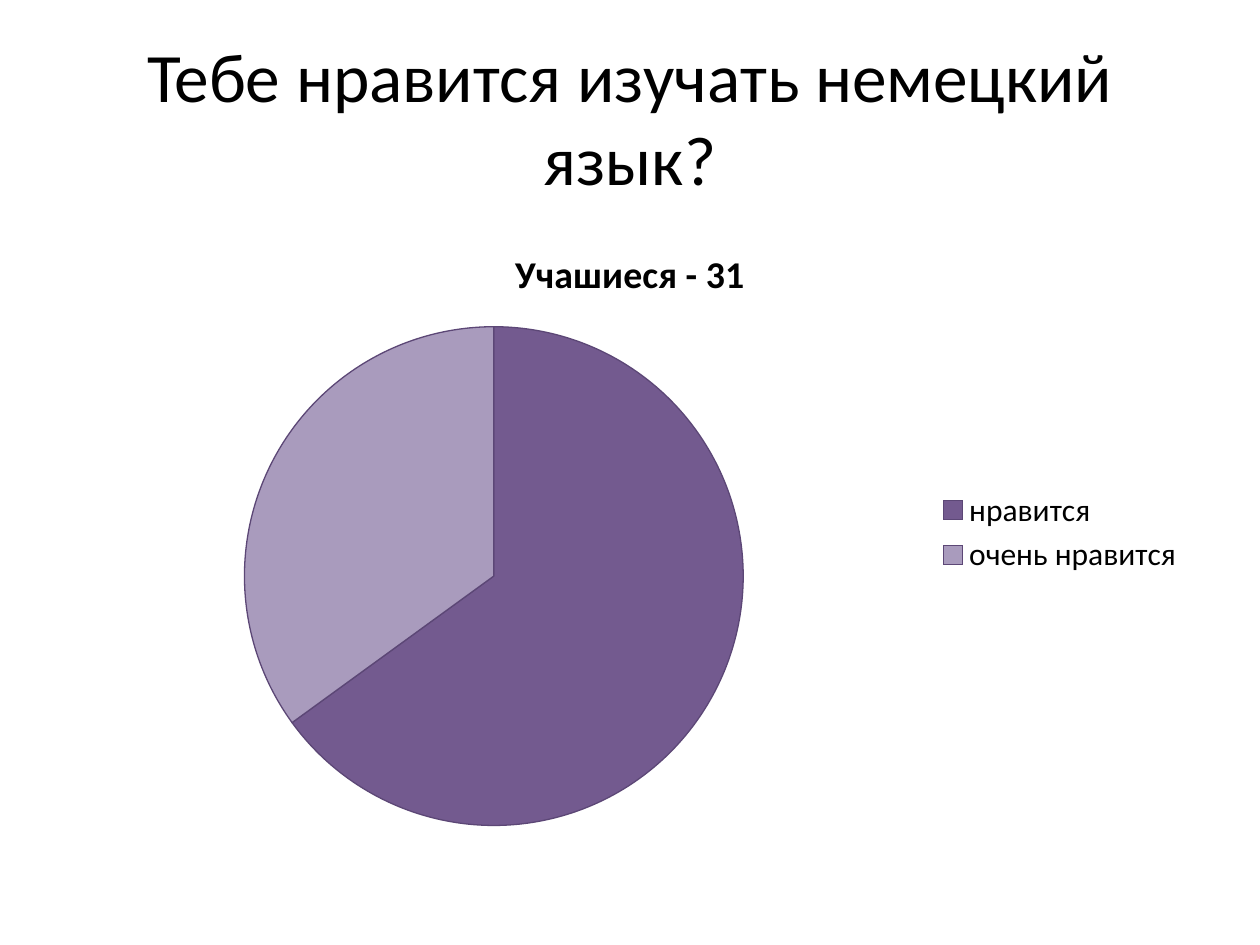
from lxml import etree
from pptx import Presentation
from pptx.chart.data import CategoryChartData
from pptx.dml.color import RGBColor
from pptx.enum.chart import XL_CHART_TYPE, XL_LEGEND_POSITION
from pptx.enum.text import MSO_ANCHOR, MSO_AUTO_SIZE, PP_ALIGN
from pptx.oxml.ns import qn
from pptx.util import Cm, Pt

PIE = XL_CHART_TYPE.PIE
RIGHT = XL_LEGEND_POSITION.RIGHT
MIDDLE = MSO_ANCHOR.MIDDLE
NO_AUTOFIT = MSO_AUTO_SIZE.NONE
CENTER = PP_ALIGN.CENTER

BLACK = RGBColor(0x00, 0x00, 0x00)
OUTLINE = RGBColor(0x5C, 0x47, 0x76)
SLICE_COLORS = (RGBColor(0x73, 0x5A, 0x8F), RGBColor(0xA9, 0x9B, 0xBD))
FONT = "Calibri"

TITLE = "Тебе нравится изучать немецкий язык?"
CHART_TITLE = "Учашиеся - 31"
ANSWERS = {"нравится": 65, "очень нравится": 35}
PLOT_LAYOUT = {"x": 0.16, "y": 0.17, "w": 0.44, "h": 0.8}


def style_font(font, size, bold=False):
    """Apply the slide's typeface and text colour."""
    font.name = FONT
    font.size = Pt(size)
    font.bold = bold
    font.color.rgb = BLACK


def add_title(s, left, top, width, height):
    """Place the question in the title placeholder."""
    sp = s.shapes.title
    sp.left, sp.top, sp.width, sp.height = left, top, width, height
    tf = sp.text_frame
    tf.text = TITLE
    tf.word_wrap = True
    tf.auto_size = NO_AUTOFIT
    tf.vertical_anchor = MIDDLE
    p = tf.paragraphs[0]
    p.alignment = CENTER
    style_font(p.font, 39.6)


def set_plot_layout(chart):
    """Fix the plot area as fractions of the chart frame."""
    plot_area = chart.element.find(".//" + qn("c:plotArea"))
    layout = plot_area.find(qn("c:layout"))
    if layout is None:
        layout = etree.Element(qn("c:layout"))
        plot_area.insert(0, layout)
    manual = etree.SubElement(layout, qn("c:manualLayout"))
    settings = {"layoutTarget": "inner", "xMode": "edge", "yMode": "edge", **PLOT_LAYOUT}
    for tag, value in settings.items():
        etree.SubElement(manual, qn("c:" + tag)).set("val", str(value))


def add_answers_chart(s, left, top, width, height):
    """Add the pie of answers with its title and legend."""
    data = CategoryChartData()
    data.categories = list(ANSWERS)
    data.add_series(CHART_TITLE, list(ANSWERS.values()))
    chart = s.shapes.add_chart(PIE, left, top, width, height, data).chart
    style_font(chart.font, 18)

    chart.has_title = True
    tf = chart.chart_title.text_frame
    tf.text = CHART_TITLE
    style_font(tf.paragraphs[0].font, 21.6, bold=True)

    chart.has_legend = True
    chart.legend.position = RIGHT
    chart.legend.include_in_layout = False
    style_font(chart.legend.font, 18)

    plot = chart.plots[0]
    plot.vary_by_categories = True
    for i, color in enumerate(SLICE_COLORS):
        fmt = plot.series[0].points[i].format
        fmt.fill.solid()
        fmt.fill.fore_color.rgb = color
        fmt.line.color.rgb = OUTLINE
        fmt.line.width = Pt(0.75)
    set_plot_layout(chart)


def main():
    """Build the survey slide and save it."""
    prs = Presentation()
    prs.slide_width, prs.slide_height = Cm(25.4), Cm(19.05)
    s = prs.slides.add_slide(prs.slide_layouts[5])
    margin = Cm(1.27)
    width = prs.slide_width - 2 * margin
    add_title(s, margin, Cm(0.76), width, Cm(3.18))
    add_answers_chart(s, margin, Cm(4.45), width, Cm(12.57))
    prs.save("out.pptx")


if __name__ == "__main__":
    main()
